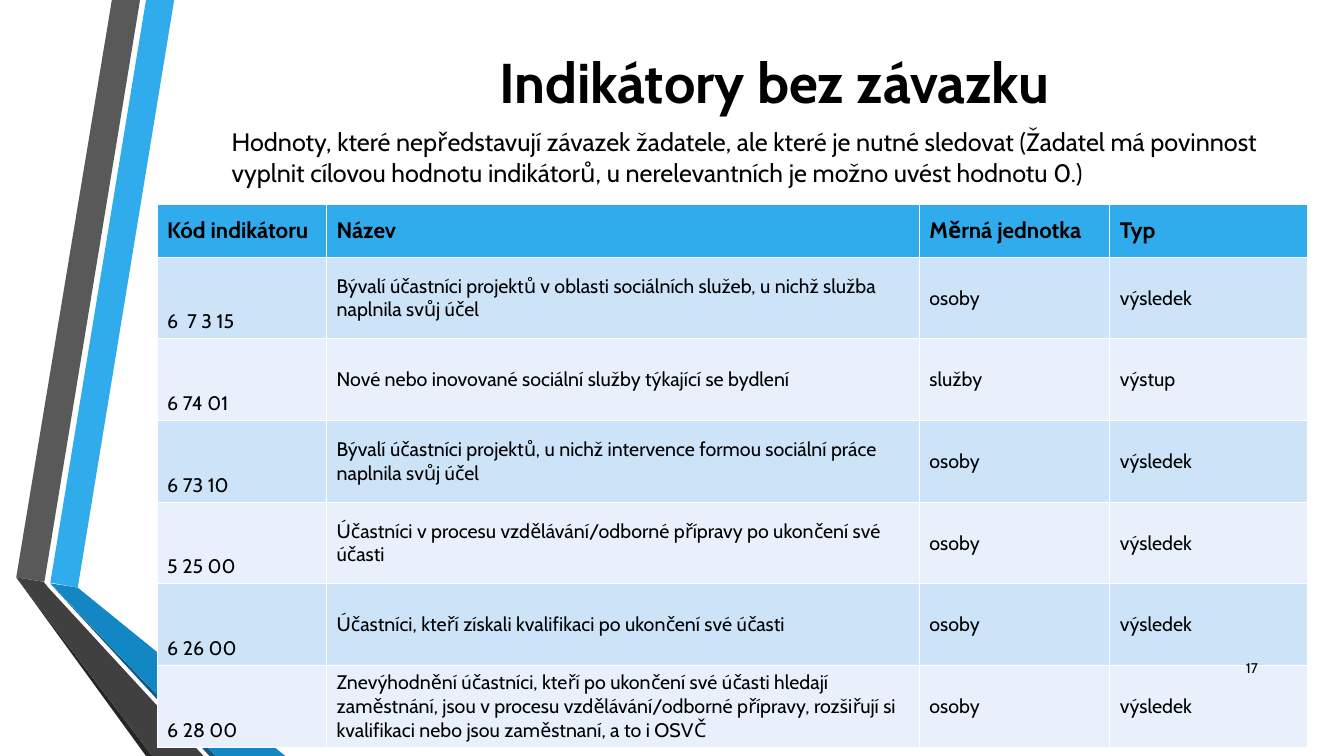
from pptx import Presentation
from pptx.dml.color import RGBColor
from pptx.enum.text import MSO_ANCHOR, MSO_AUTO_SIZE, PP_ALIGN
from pptx.util import Cm, Pt

LEFT, CENTER, RIGHT = PP_ALIGN.LEFT, PP_ALIGN.CENTER, PP_ALIGN.RIGHT
TOP, MIDDLE = MSO_ANCHOR.TOP, MSO_ANCHOR.MIDDLE
NO_AUTOSIZE = MSO_AUTO_SIZE.NONE

BLACK = RGBColor(0x00, 0x00, 0x00)
BLUE = RGBColor(0x30, 0xAC, 0xEC)
MID_BLUE = RGBColor(0x12, 0x87, 0xC3)
DARK_BLUE = RGBColor(0x0C, 0x5A, 0x82)
GREY = RGBColor(0x59, 0x59, 0x59)
DARK_GREY = RGBColor(0x40, 0x40, 0x40)
NEAR_BLACK = RGBColor(0x26, 0x26, 0x26)
BAND_DARK = RGBColor(0xCD, 0xE3, 0xF8)
BAND_LIGHT = RGBColor(0xE8, 0xF1, 0xFB)
FONT = "Cabin"

# Ribbon outlines in cm from the top left of the ribbon's box
RIBBONS = [
    (BLUE, [(0.86, 14.68), (1.55, 14.81), (3.98, 0), (3.27, 0)]),
    (GREY, [(3.12, 0), (2.41, 0), (0, 14.55), (0.71, 14.66)]),
    (NEAR_BLACK, [(0, 14.55), (3.27, 19.05), (3.43, 19.05)]),
    (DARK_BLUE, [(0.86, 14.71), (4.87, 19.05), (5.03, 19.05)]),
    (MID_BLUE, [(0.86, 14.7), (5.03, 19.05), (6.78, 19.05), (1.55, 14.81)]),
    (DARK_GREY, [(4.72, 19.05), (0.81, 14.81), (0.69, 14.66), (0, 14.55),
                 (3.43, 19.05)]),
]

HEADER = ["Kód indikátoru", "Název", "Měrná jednotka", "Typ"]
INDICATORS = [
    ("6  7 3 15", "Bývalí účastníci projektů v oblasti sociálních služeb, "
     "u nichž služba naplnila svůj účel", "osoby", "výsledek"),
    ("6 74 01", "Nové nebo inovované sociální služby týkající se bydlení",
     "služby", "výstup"),
    ("6 73 10", "Bývalí účastníci projektů, u nichž intervence formou "
     "sociální práce naplnila svůj účel", "osoby", "výsledek"),
    ("5 25 00", "Účastníci v procesu vzdělávání/odborné přípravy po ukončení "
     "své účasti", "osoby", "výsledek"),
    ("6 26 00", "Účastníci, kteří získali kvalifikaci po ukončení své účasti",
     "osoby", "výsledek"),
    ("6 28 00", "Znevýhodnění účastníci, kteří po ukončení své účasti hledají "
     "zaměstnání, jsou v procesu vzdělávání/odborné přípravy, rozšiřují si "
     "kvalifikaci nebo jsou zaměstnaní, a to i OSVČ", "osoby", "výsledek"),
]
COLUMN_WIDTHS = [4.27, 14.94, 4.8, 4.98]
ROW_HEIGHTS = [1.32] + [1.68] * 4 + [1.9] * 2


def write(tf, text, size, bold=False, align=LEFT):
    p = tf.paragraphs[0]
    p.alignment = align
    r = p.add_run()
    r.text = text
    for name, value in {"name": FONT, "size": Pt(size), "bold": bold}.items():
        setattr(r.font, name, value)
    r.font.color.rgb = BLACK
    return p


def set_frame(tf, anchor):
    settings = {"word_wrap": True, "auto_size": NO_AUTOSIZE,
                "vertical_anchor": anchor}
    for name, value in settings.items():
        setattr(tf, name, value)


def add_ribbons(s, left, top):
    for color, outline in RIBBONS:
        points = [(Cm(x), Cm(y)) for x, y in outline]
        builder = s.shapes.build_freeform(*points[0])
        builder.add_line_segments(points[1:], close=True)
        sp = builder.convert_to_shape(Cm(left), Cm(top))
        sp.shadow.inherit = False
        sp.fill.solid()
        sp.fill.fore_color.rgb = color
        sp.line.fill.background()


def add_title(s, left, top, width, height):
    sp = s.shapes.title
    box = {"left": left, "top": top, "width": width, "height": height}
    for name, value in box.items():
        setattr(sp, name, Cm(value))
    set_frame(sp.text_frame, MIDDLE)
    write(sp.text_frame, "Indikátory bez závazku", 40, True, CENTER)


def add_text(s, box, text, size, align=LEFT, anchor=TOP):
    tf = s.shapes.add_textbox(*map(Cm, box)).text_frame
    set_frame(tf, anchor)
    write(tf, text, size, align=align)


def add_indicator_table(s, left, top):
    rows = [HEADER] + INDICATORS
    frame = s.shapes.add_table(
        len(rows), len(HEADER), Cm(left), Cm(top),
        Cm(sum(COLUMN_WIDTHS)), Cm(sum(ROW_HEIGHTS)))
    table = frame.table
    for column, width in zip(table.columns, COLUMN_WIDTHS):
        column.width = Cm(width)
    for i, (texts, height) in enumerate(zip(rows, ROW_HEIGHTS)):
        table.rows[i].height = Cm(height)
        is_header = i == 0
        band = BAND_DARK if i % 2 else BAND_LIGHT
        for j, text in enumerate(texts):
            cell = table.cell(i, j)
            cell.vertical_anchor = MIDDLE
            cell.fill.solid()
            cell.fill.fore_color.rgb = BLUE if is_header else band
            p = write(cell.text_frame, text, 16 if is_header else 14, is_header)
            if j == 0 and not is_header:
                p.line_spacing = 3.0


def main():
    prs = Presentation()
    prs.slide_width, prs.slide_height = Cm(33.87), Cm(19.05)
    s = prs.slides.add_slide(prs.slide_layouts[5])
    add_ribbons(s, 0.41, 0)
    add_title(s, 8.46, 1.07, 22.12, 1.96)
    add_text(s, (5.59, 3.07, 27.28, 1.8),
             "Hodnoty, které nepředstavují závazek žadatele, ale které je nutné "
             "sledovat (Žadatel má povinnost vyplnit cílovou hodnotu indikátorů, "
             "u nerelevantních je možno uvést hodnotu 0.)", 18)
    add_indicator_table(s, 3.96, 5.16)
    add_text(s, (30.43, 16.33, 1.52, 1.02), "17", 10, RIGHT, MIDDLE)
    prs.save("out.pptx")


if __name__ == "__main__":
    main()
